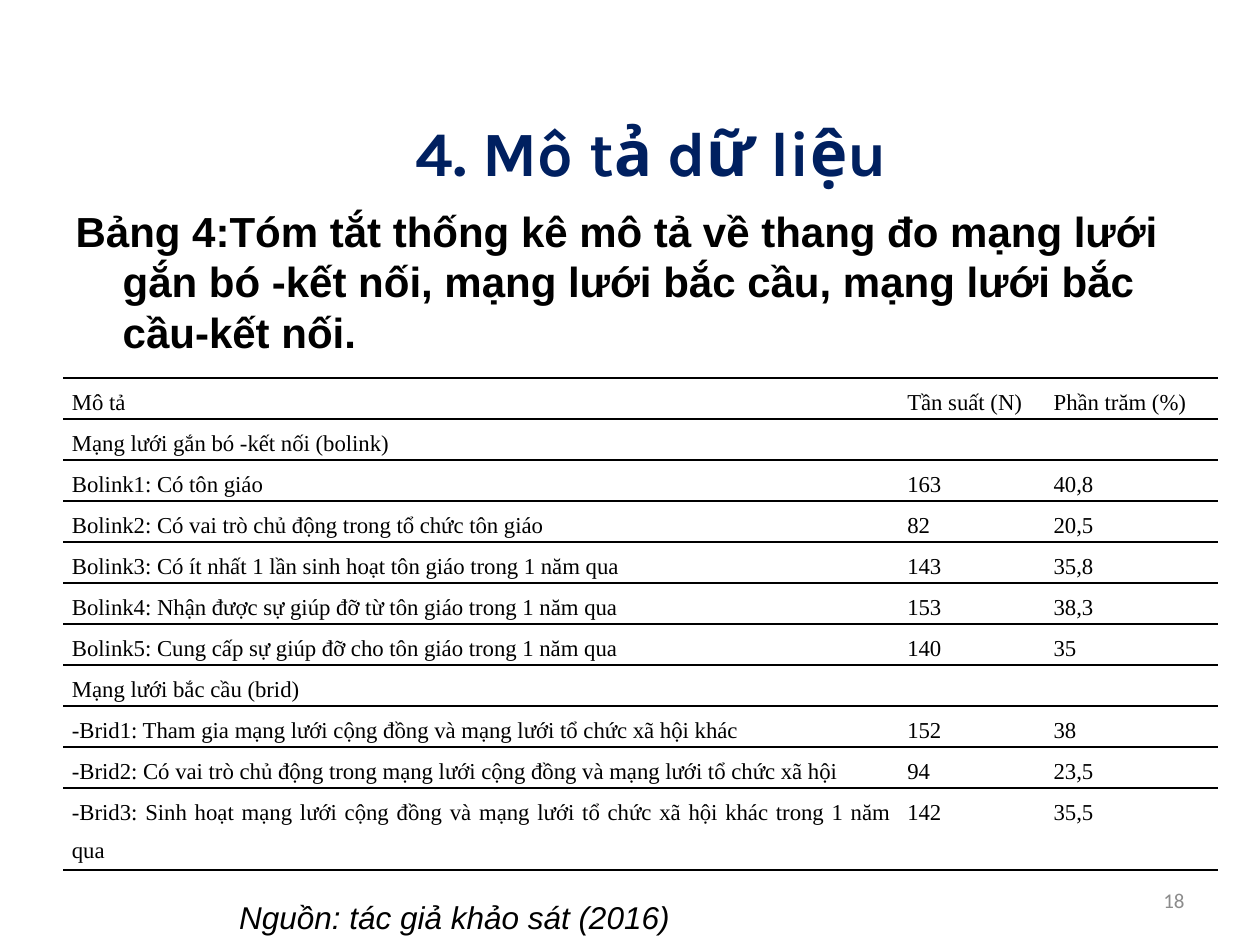
from lxml.etree import SubElement
from pptx import Presentation
from pptx.dml.color import RGBColor
from pptx.enum.text import MSO_ANCHOR, MSO_AUTO_SIZE, PP_ALIGN
from pptx.oxml import parse_xml
from pptx.oxml.ns import nsdecls, qn
from pptx.util import Cm, Pt

COLORS = {"title": "002060", "text": "000000", "number": "8C8C8C", "paper": "FFFFFF"}
PLAIN_TABLE = "{2D5ABB26-0587-4C30-8999-92F81FD0307C}"
COLUMN_WIDTHS = (16.84, 2.95, 3.5)
ROW_HEIGHT = 0.826

ROWS = [
    ("Mô tả", "Tần suất (N)", "Phần trăm (%)"),
    ("Mạng lưới gắn bó -kết nối (bolink)", "", ""),
    ("Bolink1: Có tôn giáo", "163", "40,8"),
    ("Bolink2: Có vai trò chủ động trong tổ chức tôn giáo", "82", "20,5"),
    ("Bolink3: Có ít nhất 1 lần sinh hoạt tôn giáo trong 1 năm qua", "143", "35,8"),
    ("Bolink4: Nhận được sự giúp đỡ từ tôn giáo trong 1 năm qua", "153", "38,3"),
    ("Bolink5: Cung cấp sự giúp đỡ cho tôn giáo trong 1 năm qua", "140", "35"),
    ("Mạng lưới bắc cầu (brid)", "", ""),
    ("-Brid1: Tham gia mạng lưới cộng đồng và mạng lưới tổ chức xã hội khác",
     "152", "38"),
    ("-Brid2: Có vai trò chủ động trong mạng lưới cộng đồng và mạng lưới tổ chức xã hội",
     "94", "23,5"),
    ("-Brid3: Sinh hoạt mạng lưới cộng đồng và mạng lưới tổ chức xã hội khác "
     "trong 1 năm qua", "142", "35,5"),
]


class SlideBuilder:
    def __init__(self, slide):
        self.slide = slide

    def place(self, shape, left, top, width, height):
        shape.left, shape.top = Cm(left), Cm(top)
        shape.width, shape.height = Cm(width), Cm(height)

    def style(self, paragraph, name, size, color="text", bold=False, italic=False):
        for font in [paragraph.font] + [span.font for span in paragraph.runs]:
            font.name, font.size = name, Pt(size)
            font.bold, font.italic = bold, italic
            font.color.rgb = RGBColor.from_string(COLORS[color])

    def title(self, text, *bounds):
        box = self.slide.shapes.title
        self.place(box, *bounds)
        frame = box.text_frame
        frame.text = text
        frame.auto_size = MSO_AUTO_SIZE.NONE
        frame.vertical_anchor = MSO_ANCHOR.MIDDLE
        para = frame.paragraphs[0]
        para.alignment = PP_ALIGN.CENTER
        self.style(para, "Karla", 36, "title", bold=True)

    def caption(self, text, *bounds):
        """Fill the body placeholder with an unbulleted, hanging paragraph."""
        box = self.slide.placeholders[1]
        self.place(box, *bounds)
        frame = box.text_frame
        frame.text = text
        frame.auto_size = MSO_AUTO_SIZE.NONE
        para = frame.paragraphs[0]
        para.space_before = Pt(0)
        properties = para._p.get_or_add_pPr()
        properties.set("marL", str(Cm(0.95)))
        properties.set("indent", str(-Cm(0.95)))
        SubElement(properties, qn("a:buNone"))
        self.style(para, "Arial", 24, bold=True)

    def label(self, text, bounds, align, *font, **emphasis):
        box = self.slide.shapes.add_textbox(*map(Cm, bounds))
        frame = box.text_frame
        frame.word_wrap = True
        frame.vertical_anchor = MSO_ANCHOR.MIDDLE
        frame.text = text
        para = frame.paragraphs[0]
        para.alignment = align
        self.style(para, *font, **emphasis)

    def table(self, rows, left, top):
        frame = self.slide.shapes.add_table(
            len(rows), len(COLUMN_WIDTHS), Cm(left), Cm(top),
            Cm(sum(COLUMN_WIDTHS)), Cm(ROW_HEIGHT * (len(rows) + 1)))
        table = frame.table
        table.first_row = table.horz_banding = False
        table._tbl.tblPr.find(qn("a:tableStyleId")).text = PLAIN_TABLE
        for column, width in zip(table.columns, COLUMN_WIDTHS):
            column.width = Cm(width)
        for row, texts in zip(table.rows, rows):
            row.height = Cm(ROW_HEIGHT)
            for cell, text in zip(row.cells, texts):
                self.cell(cell, text)
        table.rows[len(rows) - 1].height = Cm(2 * ROW_HEIGHT)

    def cell(self, cell, text):
        cell.text = text
        cell.margin_left = cell.margin_right = Cm(0.18)
        cell.margin_top = cell.margin_bottom = 0
        para = cell.text_frame.paragraphs[0]
        para.alignment = PP_ALIGN.JUSTIFY
        para.line_spacing = 1.5
        self.style(para, "Times New Roman", 13)
        cell.fill.solid()
        cell.fill.fore_color.rgb = RGBColor.from_string(COLORS["paper"])
        properties = cell._tc.get_or_add_tcPr()
        for position, side in enumerate(("lnT", "lnB")):
            properties.insert(position, parse_xml(
                f'<a:{side} {nsdecls("a")} w="{Pt(1)}"><a:solidFill>'
                f'<a:srgbClr val="{COLORS["text"]}"/></a:solidFill></a:{side}>'))


def main():
    deck = Presentation()
    deck.slide_width, deck.slide_height = Cm(25.4), Cm(19.05)
    builder = SlideBuilder(deck.slides.add_slide(deck.slide_layouts[1]))
    builder.title("4. Mô tả dữ liệu", 1.7, 2.11, 22.86, 1.9)
    builder.caption(
        "Bảng 4:Tóm tắt thống kê mô tả về thang đo mạng lưới gắn bó -kết nối, "
        "mạng lưới bắc cầu, mạng lưới bắc cầu-kết nối.", 1.27, 4.01, 22.86, 13)
    builder.label("18", (18.2, 17.65, 5.93, 1.01), PP_ALIGN.RIGHT,
                  "Calibri", 12, "number")
    builder.label("Nguồn: tác giả khảo sát (2016)", (4.57, 17.98, 14.68, 1.02),
                  PP_ALIGN.LEFT, "Arial", 18, italic=True)
    builder.table(ROWS, 1.27, 7.62)
    deck.save("out.pptx")


if __name__ == "__main__":
    main()
